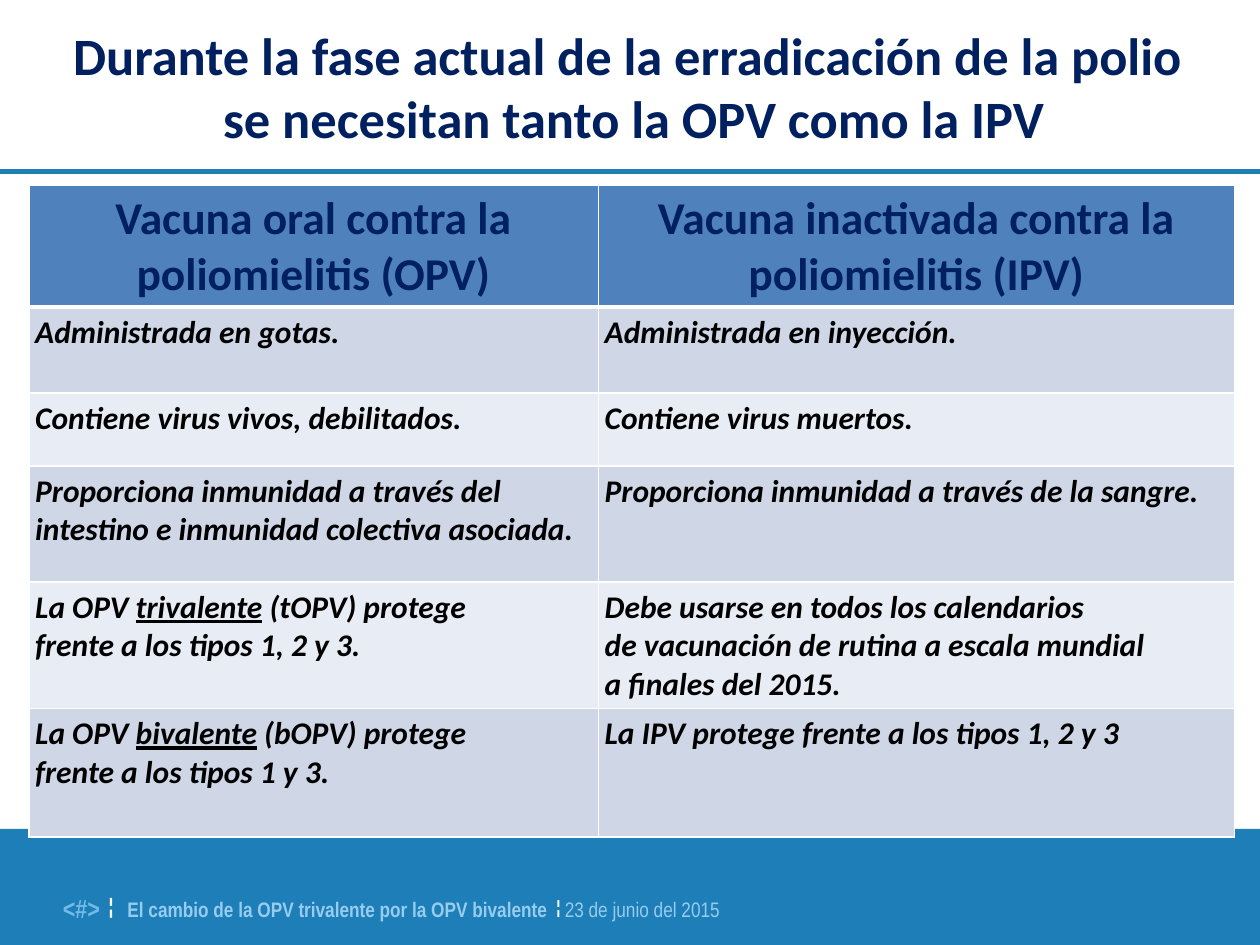
import pptx
import pptx.dml.color
import pptx.enum.shapes
import pptx.enum.text
import pptx.oxml.ns
import pptx.util
from lxml import etree

Cm = pptx.util.Cm
Pt = pptx.util.Pt
qn = pptx.oxml.ns.qn
ALIGN = pptx.enum.text.PP_ALIGN
ANCHOR = pptx.enum.text.MSO_ANCHOR

BLUE, NAVY, WHITE, BLACK = "1E7FB8", "002060", "FFFFFF", "000000"
PALE, SKY = "96CCEE", "72BBE8"
HEADER_FILL, BANDS = "4F81BD", ("CFD7E7", "E8ECF4")

HEADERS = ("Vacuna oral contra la poliomielitis (OPV)",
           "Vacuna inactivada contra la poliomielitis (IPV)")
# Underscores enclose underlined words.
ROWS = (
    ("Administrada en gotas.", "Administrada en inyección."),
    ("Contiene virus vivos, debilitados.", "Contiene virus muertos."),
    ("Proporciona inmunidad a través del intestino e inmunidad colectiva asociada.",
     "Proporciona inmunidad a través de la sangre."),
    ("La OPV _trivalente_ (tOPV) protege \nfrente a los tipos 1, 2 y 3.",
     "Debe usarse en todos los calendarios \nde vacunación de rutina a escala mundial \n"
     "a finales del 2015."),
    ("La OPV _bivalente_ (bOPV) protege \nfrente a los tipos 1 y 3.",
     "La IPV protege frente a los tipos 1, 2 y 3"),
)
COLUMN_WIDTHS = (11.48, 12.83)
ROW_HEIGHTS = (2.46, 1.73, 1.47, 2.34, 2.54, 2.59)


def rgb(color):
    return pptx.dml.color.RGBColor.from_string(color)


class Deck:
    def __init__(self, font="Calibri"):
        self.font = font
        self.prs = pptx.Presentation()
        self.prs.slide_width, self.prs.slide_height = Cm(25.4), Cm(19.05)
        self.s = self.prs.slides.add_slide(self.prs.slide_layouts[6])

    def line(self, x1, y1, x2, y2, color, width):
        ln = self.s.shapes.add_connector(
            pptx.enum.shapes.MSO_CONNECTOR.STRAIGHT, Cm(x1), Cm(y1), Cm(x2), Cm(y2))
        ln.line.color.rgb = rgb(color)
        ln.line.width = Pt(width)
        etree.SubElement(ln._element.spPr, qn("a:effectLst"))

    def bar(self, x, y, w, h, color):
        sp = self.s.shapes.add_shape(
            pptx.enum.shapes.MSO_SHAPE.RECTANGLE, Cm(x), Cm(y), Cm(w), Cm(h))
        sp.shadow.inherit = False
        sp.fill.solid()
        sp.fill.fore_color.rgb = rgb(color)
        sp.line.fill.background()

    def box(self, x, y, w, h, align=ALIGN.LEFT, anchor=ANCHOR.TOP):
        """Add a text box without margins and return its first paragraph."""
        tf = self.s.shapes.add_textbox(Cm(x), Cm(y), Cm(w), Cm(h)).text_frame
        tf.word_wrap = True
        tf.vertical_anchor = anchor
        tf.margin_left = tf.margin_top = tf.margin_right = tf.margin_bottom = 0
        p = tf.paragraphs[0]
        p.alignment = align
        return p

    def run(self, p, text, size, color, font=None, bold=False, italic=False,
            underline=False, raised=0, glow=None):
        """Append text, one run per line; raised is a baseline shift in percent."""
        for i, part in enumerate(text.split("\n")):
            if i:
                p.add_line_break()
            r = p.add_run()
            r.text = part
            f = r.font
            f.size, f.bold, f.italic = Pt(size), bold, italic
            f.underline = underline
            f.color.rgb = rgb(color)
            f.name = font or self.font
            if raised:
                r._r.get_or_add_rPr().set("baseline", str(raised * 1000))
            if glow:
                self.text_shadow(r, glow)

    def text_shadow(self, r, color):
        effects = etree.Element(qn("a:effectLst"))
        shadow = etree.SubElement(effects, qn("a:outerShdw"), blurRad="38100",
                                  dist="38100", dir="2700000", algn="tl")
        etree.SubElement(shadow, qn("a:srgbClr"), val=color)
        r._r.get_or_add_rPr().find(qn("a:latin")).addprevious(effects)

    def borders(self, cell, top, bottom):
        tcPr = cell._tc.get_or_add_tcPr()
        for tag, width in (("lnL", 1), ("lnR", 1), ("lnT", top), ("lnB", bottom)):
            ln = etree.SubElement(tcPr, qn("a:" + tag), w=str(Pt(width)))
            fill = etree.SubElement(ln, qn("a:solidFill"))
            etree.SubElement(fill, qn("a:srgbClr"), val=WHITE)

    def table(self, x, y, widths, heights, headers, rows):
        table = self.s.shapes.add_table(
            len(heights), len(widths), Cm(x), Cm(y), Cm(sum(widths)), Cm(sum(heights))).table
        for column, width in zip(table.columns, widths):
            column.width = Cm(width)
        for row, height in zip(table.rows, heights):
            row.height = Cm(height)
        for i, texts in enumerate((headers, *rows)):
            for j, text in enumerate(texts):
                cell = table.cell(i, j)
                cell.margin_left = cell.margin_right = Cm(0.13)
                cell.margin_top = cell.margin_bottom = Cm(0.13)
                self.borders(cell, 3 if i == 1 else 1, 3 if i == 0 else 1)
                cell.fill.solid()
                cell.fill.fore_color.rgb = rgb(BANDS[(i - 1) % 2] if i else HEADER_FILL)
                p = cell.text_frame.paragraphs[0]
                if i == 0:
                    p.alignment = ALIGN.CENTER
                    self.run(p, text, 26, NAVY, bold=True)
                    continue
                for k, part in enumerate(text.split("_")):
                    self.run(p, part, 18, BLACK, bold=True, italic=True,
                             underline=k % 2 == 1)


def main():
    d = Deck()
    d.line(0, 3.45, 25.4, 3.45, BLUE, 3)
    d.bar(0, 16.71, 25.4, 2.34, BLUE)

    narrow = "Arial Narrow"
    p = d.box(2.57, 17.86, 13.72, 0.76)
    d.run(p, "El cambio de la OPV trivalente por la OPV bivalente", 12, PALE, narrow, bold=True)
    d.run(p, " ", 18, BLACK, "Arial")
    d.run(p, "¦ ", 18, WHITE, narrow, bold=True, raised=12)
    d.run(p, "23 de junio del 2015", 12, PALE, narrow)

    p = d.box(0.99, 17.78, 1.3, 0.84, ALIGN.RIGHT)
    d.run(p, "<#>", 15, SKY, narrow, bold=True)
    d.run(p, " ", 18, BLACK, "Arial")
    d.run(p, "¦", 21, WHITE, narrow, bold=True, raised=14)

    p = d.box(0.08, 0.46, 25.4, 2.57, ALIGN.CENTER, ANCHOR.MIDDLE)
    d.run(p, "Durante la fase actual de la erradicación de la polio \n"
          "se necesitan tanto la OPV como la IPV", 30, NAVY, bold=True, glow=PALE)

    d.table(0.58, 3.73, COLUMN_WIDTHS, ROW_HEIGHTS, HEADERS, ROWS)
    d.prs.save("out.pptx")


if __name__ == "__main__":
    main()
